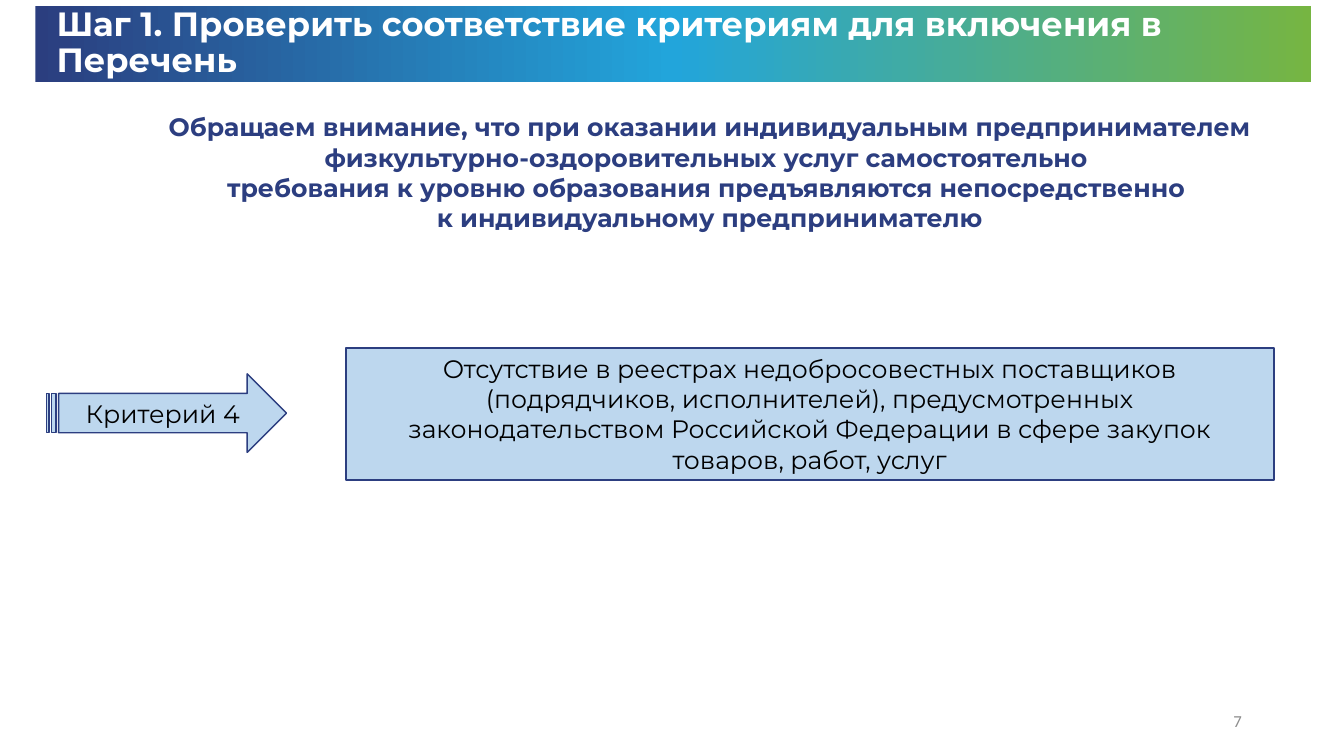
import copy
from dataclasses import dataclass

import pptx
import pptx.dml.color
import pptx.enum.shapes
import pptx.enum.text
import pptx.oxml.ns
import pptx.util

Cm = pptx.util.Cm
Pt = pptx.util.Pt
ALIGN = pptx.enum.text.PP_ALIGN
ANCHOR = pptx.enum.text.MSO_ANCHOR
SHAPE = pptx.enum.shapes.MSO_SHAPE

TITLE = "Шаг 1. Проверить соответствие критериям для включения в Перечень"
NOTICE = [
    "Обращаем внимание, что при оказании индивидуальным предпринимателем "
    "физкультурно-оздоровительных услуг самостоятельно ",
    "требования к уровню образования предъявляются непосредственно ",
    "к индивидуальному предпринимателю",
]
CRITERION = "Критерий 4"
REQUIREMENT = (
    "Отсутствие в реестрах недобросовестных поставщиков (подрядчиков, "
    "исполнителей), предусмотренных законодательством Российской Федерации "
    "в сфере закупок товаров, работ, услуг"
)
PAGE_NUMBER = "7"

# left, top, width, height in centimetres
BAND_BOX = (0.89, 0.15, 32.16, 1.91)
TITLE_BOX = (1.17, 0.18, 32.16, 1.85)
NOTICE_BOX = (2.72, 2.69, 30.33, 3.33)
ARROW_BOX = (1.17, 9.42, 6.05, 1.98)
REQUIREMENT_BOX = (8.71, 8.76, 23.39, 3.33)
PAGE_BOX = (23.93, 17.65, 7.62, 1.02)


@dataclass(frozen=True)
class Theme:
    font: str = "Montserrat"
    page_font: str = "Calibri"
    title_size: int = 24
    body_size: int = 18
    page_size: int = 12
    white: str = "FFFFFF"
    black: str = "000000"
    gray: str = "8C8C8C"
    navy: str = "2C3E80"
    pale_blue: str = "BDD7EE"
    band: tuple = ("2B3E7F", "22A5DB", "76B542")


THEME = Theme()


def rgb(value):
    return pptx.dml.color.RGBColor.from_string(value)


def lengths(box):
    return [Cm(value) for value in box]


def write(sp, lines, size, color, align=ALIGN.CENTER, anchor=ANCHOR.MIDDLE,
          bold=False, font=THEME.font):
    """Fill a shape with one paragraph, breaking it between the given lines."""
    tf = sp.text_frame
    tf.word_wrap = True
    tf.vertical_anchor = anchor
    p = tf.paragraphs[0]
    p.alignment = align
    for i, line in enumerate(lines):
        if i:
            p.add_line_break()
        r = p.add_run()
        r.text = line
        r.font.name = font
        r.font.size = Pt(size)
        r.font.bold = bold
        r.font.color.rgb = rgb(color)
    return p


def add_band(s):
    sp = s.shapes.add_shape(SHAPE.RECTANGLE, *lengths(BAND_BOX))
    sp.shadow.inherit = False
    sp.line.fill.background()
    sp.fill.gradient()
    sp.fill.gradient_angle = 0
    stop_list = sp.element.find(".//" + pptx.oxml.ns.qn("a:gsLst"))
    while len(stop_list) < len(THEME.band):
        stop_list.append(copy.deepcopy(stop_list[0]))
    for i, (stop, color) in enumerate(zip(sp.fill.gradient_stops, THEME.band)):
        stop.position = i / (len(THEME.band) - 1)
        stop.color.rgb = rgb(color)
    return sp


def add_title(s, band):
    title = s.shapes.title
    title.left, title.top, title.width, title.height = lengths(TITLE_BOX)
    p = write(title, [TITLE], THEME.title_size, THEME.white,
              align=ALIGN.LEFT, bold=True)
    p.line_spacing = 0.9
    title.text_frame.auto_size = pptx.enum.text.MSO_AUTO_SIZE.NONE
    band.element.addnext(title.element)  # the title lies in front of the band


def add_panel(s, kind, box, text, line_width):
    sp = s.shapes.add_shape(kind, *lengths(box))
    sp.shadow.inherit = False
    sp.fill.solid()
    sp.fill.fore_color.rgb = rgb(THEME.pale_blue)
    sp.line.color.rgb = rgb(THEME.navy)
    sp.line.width = Pt(line_width)
    write(sp, [text], THEME.body_size, THEME.black)


def main():
    prs = pptx.Presentation()
    prs.slide_width, prs.slide_height = Cm(33.87), Cm(19.05)
    s = prs.slides.add_slide(prs.slide_layouts[5])

    add_title(s, add_band(s))
    add_panel(s, SHAPE.RECTANGLE, REQUIREMENT_BOX, REQUIREMENT, 1.5)
    add_panel(s, SHAPE.STRIPED_RIGHT_ARROW, ARROW_BOX, CRITERION, 1)

    notice = s.shapes.add_textbox(*lengths(NOTICE_BOX))
    write(notice, NOTICE, THEME.body_size, THEME.navy,
          anchor=ANCHOR.TOP, bold=True)
    page = s.shapes.add_textbox(*lengths(PAGE_BOX))
    write(page, [PAGE_NUMBER], THEME.page_size, THEME.gray,
          align=ALIGN.RIGHT, font=THEME.page_font)

    prs.save("out.pptx")


if __name__ == "__main__":
    main()
